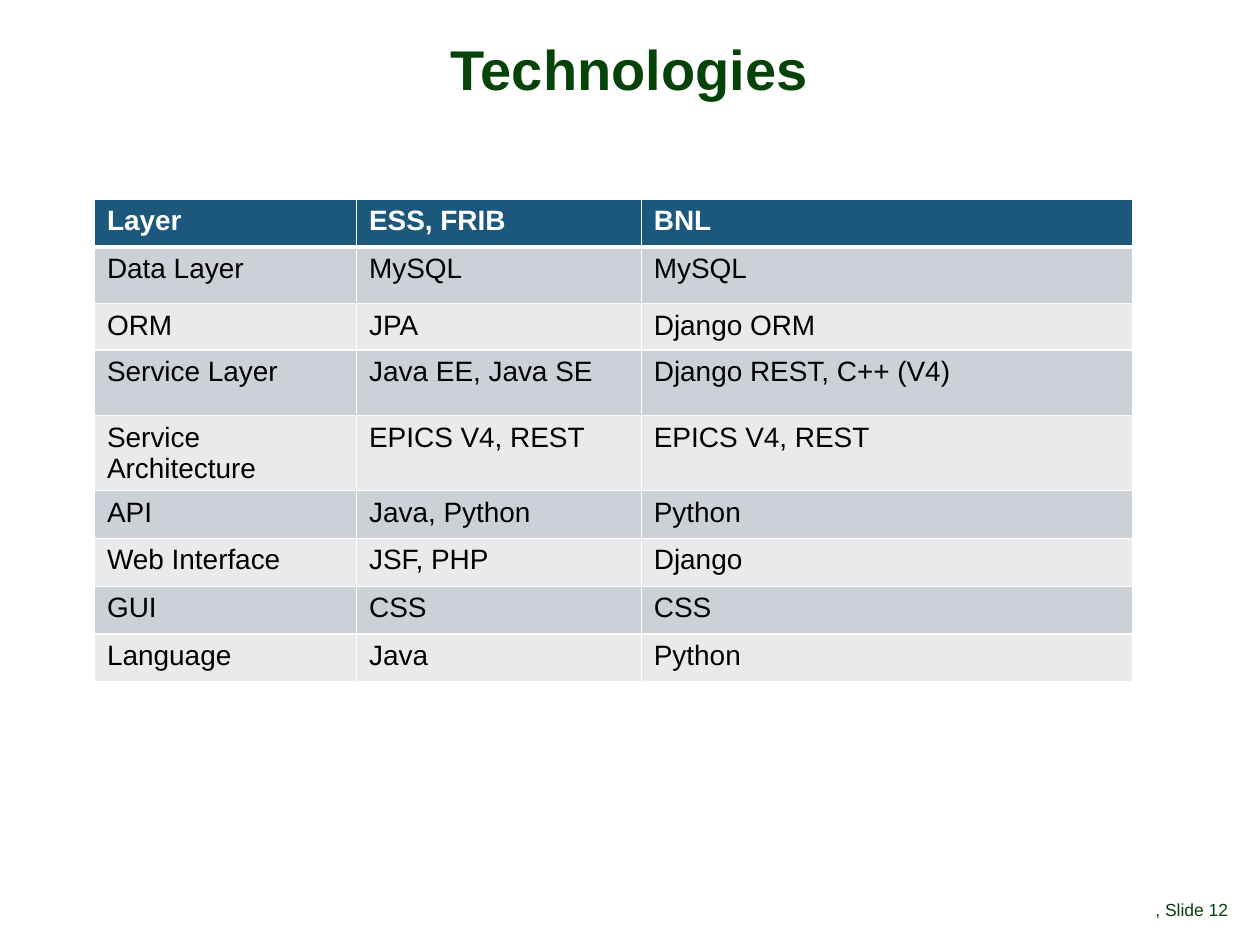
from lxml.etree import SubElement as Sub
from pptx import Presentation
from pptx.dml.color import RGBColor
from pptx.enum.text import MSO_ANCHOR as Anchor, PP_ALIGN as Align
from pptx.oxml.ns import qn
from pptx.util import Inches, Pt

GREEN = "064308"
WHITE = "FFFFFF"
BLUE = "1B587C"
BANDS = ("CDD1D7", "E8EAEC")
COLS = (2.08, 2.26, 3.9)
TALL = {1: 0.45, 2: 0.37, 3: 0.52}
ROWS = [
    ("Layer", "ESS, FRIB", "BNL"),
    ("Data Layer", "MySQL", "MySQL"),
    ("ORM", "JPA", "Django ORM"),
    ("Service Layer", "Java EE, Java SE", "Django REST, C++ (V4)"),
    ("Service Architecture", "EPICS V4, REST", "EPICS V4, REST"),
    ("API", "Java, Python", "Python"),
    ("Web Interface", "JSF, PHP", "Django"),
    ("GUI", "CSS", "CSS"),
    ("Language", "Java", "Python"),
]


def color(code):
    return RGBColor.from_string(code)


def write(frame, text, size=16, fill="000000", bold=False, align=Align.LEFT, space=None):
    para = frame.paragraphs[0]
    para.alignment = align
    para.line_spacing = space
    run = para.add_run()
    run.text = text
    font = run.font
    font.name = "Arial"
    font.size = Pt(size)
    font.bold = bold
    font.color.rgb = color(fill)


def inset(frame, side, edge, anchor):
    frame.word_wrap = True
    frame.margin_left = frame.margin_right = Inches(side)
    frame.margin_top = frame.margin_bottom = Inches(edge)
    frame.vertical_anchor = anchor


def border(cell, **widths):
    props = cell._tc.get_or_add_tcPr()
    for side in "LRTB":
        line = Sub(props, qn("a:ln" + side), w=str(Pt(widths.get(side, 1))))
        fill = Sub(line, qn("a:solidFill"))
        Sub(fill, qn("a:srgbClr"), val=WHITE)


def add_title(slide, text):
    title = slide.shapes.title
    title.left, title.top = Inches(0.08), Inches(0.31)
    title.width, title.height = Inches(9.83), Inches(0.53)
    inset(title.text_frame, 0.06, 0.02, Anchor.MIDDLE)
    write(title.text_frame, text, size=32, fill=GREEN, bold=True,
          align=Align.CENTER, space=0.88)


def add_grid(slide):
    frame = slide.shapes.add_table(len(ROWS), len(COLS), Inches(0.75), Inches(1.58),
                                   Inches(8.25), Inches(3.88))
    table = frame.table
    for col, width in zip(table.columns, COLS):
        col.width = Inches(width)
    for i, texts in enumerate(ROWS):
        table.rows[i].height = Inches(TALL.get(i, 0.38))
        head = i == 0
        for j, text in enumerate(texts):
            cell = table.cell(i, j)
            border(cell, T=3 if i == 1 else 1, B=3 if head else 1)
            cell.fill.solid()
            cell.fill.fore_color.rgb = color(BLUE if head else BANDS[(i - 1) % 2])
            write(cell.text_frame, text, fill=WHITE if head else "000000", bold=head)


def add_footer(slide, text):
    box = slide.shapes.add_textbox(Inches(9.17), Inches(6.95), Inches(0.83), Inches(0.4))
    inset(box.text_frame, 0, 0.05, Anchor.BOTTOM)
    write(box.text_frame, text, size=10, fill=GREEN, space=0.9)


def main():
    deck = Presentation()
    deck.slide_width, deck.slide_height = Inches(10), Inches(7.5)
    slide = deck.slides.add_slide(deck.slide_layouts[5])
    add_title(slide, "Technologies")
    add_grid(slide)
    add_footer(slide, ", Slide 12")
    deck.save("out.pptx")


if __name__ == "__main__":
    main()
